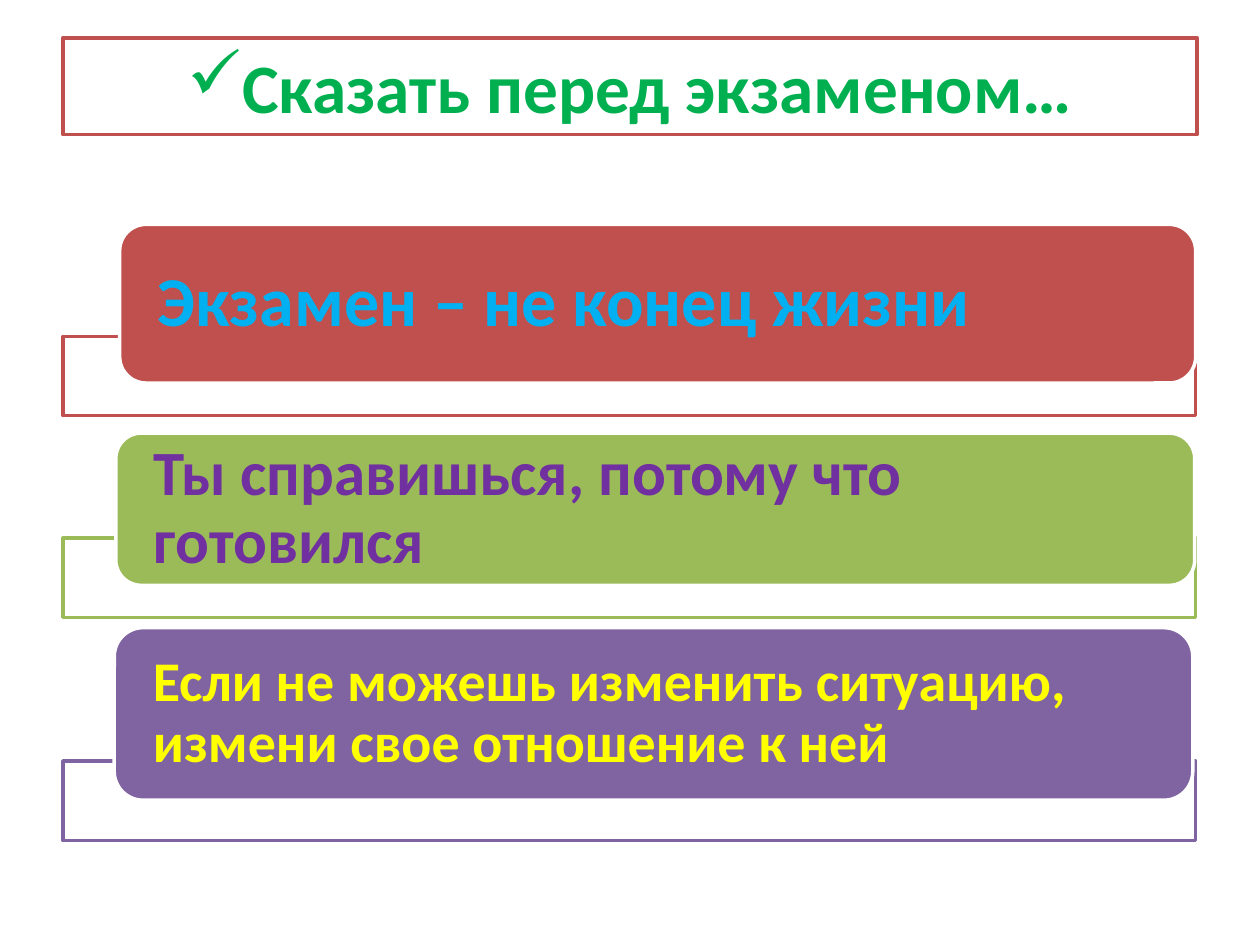
"""Build a slide with three encouraging phrases to say before an exam."""
from lxml.etree import SubElement
from pptx import Presentation
from pptx.dml.color import RGBColor
from pptx.enum.shapes import MSO_SHAPE
from pptx.enum.text import MSO_ANCHOR, PP_ALIGN
from pptx.oxml.ns import qn
from pptx.util import Pt

COLORS = {
    "white": "FFFFFF", "red": "C0504D", "olive": "9BBB59", "violet": "8064A2",
    "green": "00B050", "blue": "00B0F0", "purple": "7030A0", "yellow": "FFFF00",
}
PHRASES = [
    ("Экзамен – не конец жизни", 40, "blue", "red",
     192.2, (68.4, 128.2, 614.9, 90.7)),
    ("Ты справишься, потому что готовился", 36, "purple", "olive",
     307.4, (66.2, 247.5, 616.5, 87)),
    ("Если не можешь изменить ситуацию, измени свое отношение к ней", 32, "yellow", "violet",
     434.9, (65.3, 358.7, 616.3, 98.6)),
]


def add_box(preset, bounds, fill, line):
    box = slide.shapes.add_shape(preset, *[Pt(length) for length in bounds])
    box.shadow.inherit = False
    box.fill.solid()
    box.fill.fore_color.rgb = RGBColor.from_string(COLORS[fill])
    box.line.color.rgb = RGBColor.from_string(COLORS[line])
    box.line.width = Pt(2)
    return box


def write_text(box, text, size, color, alignment):
    frame = box.text_frame
    frame.word_wrap = True
    frame.vertical_anchor = MSO_ANCHOR.MIDDLE
    para = frame.paragraphs[0]
    para.text = text
    para.alignment = alignment
    para.font.name = "Calibri"
    para.font.size = Pt(size)
    para.font.bold = True
    para.font.color.rgb = RGBColor.from_string(COLORS[color])
    return para


deck = Presentation()
deck.slide_width, deck.slide_height = Pt(720), Pt(540)
slide = deck.slides.add_slide(deck.slide_layouts[6])

title = add_box(MSO_SHAPE.RECTANGLE, (36, 21.6, 648, 55.4), "white", "red")
title_para = write_text(title, "Сказать перед экзаменом…", 39.6, "green", PP_ALIGN.CENTER)
properties = title_para._p.get_or_add_pPr()
properties.set("marL", "0")
properties.set("indent", "0")
bullet = properties.makeelement(qn("a:buChar"), {"char": "✓"})
properties.insert(0, bullet)

for text, size, text_color, color, frame_top, bounds in PHRASES:
    outline = add_box(MSO_SHAPE.RECTANGLE, (36, frame_top, 647.3, 45.4), "white", color)
    fill_color = outline._element.spPr.find(qn("a:solidFill")).find(qn("a:srgbClr"))
    SubElement(fill_color, qn("a:alpha"), val="90000")

    card = add_box(MSO_SHAPE.ROUNDED_RECTANGLE, bounds, color, "white")
    card_para = write_text(card, text, size, text_color, PP_ALIGN.LEFT)
    card_para.line_spacing = 0.9
    card.text_frame.margin_left = card.text_frame.margin_right = Pt(17.3)
    card.text_frame.margin_top = card.text_frame.margin_bottom = Pt(0)

deck.save("out.pptx")
